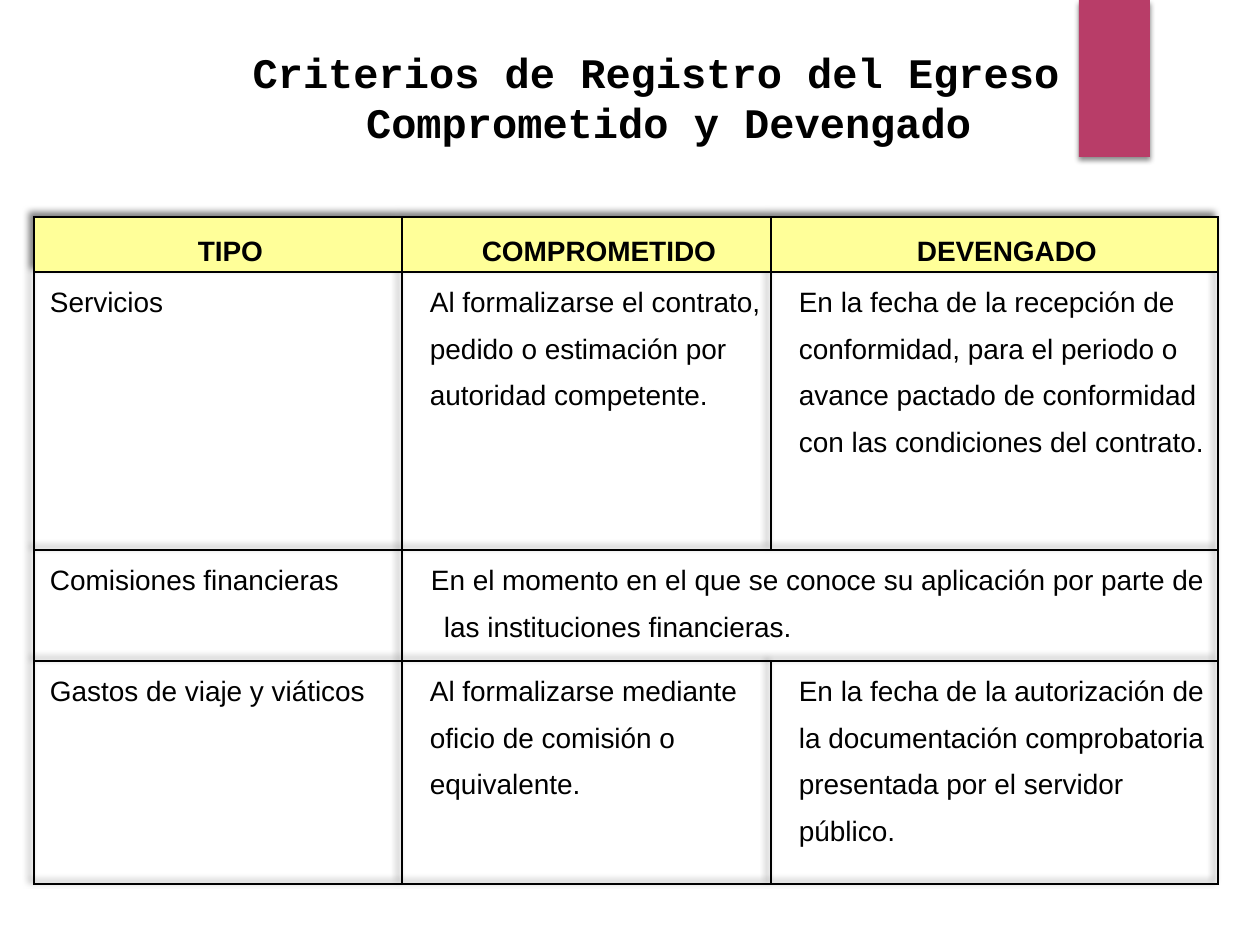
from lxml.etree import SubElement
from pptx import Presentation
from pptx.dml.color import RGBColor
from pptx.enum.shapes import MSO_SHAPE
from pptx.enum.text import MSO_ANCHOR, PP_ALIGN
from pptx.oxml import parse_xml
from pptx.oxml.ns import nsdecls, qn
from pptx.util import Emu, Pt

EMU_PER_PX = 914400 / 126
BLACK = RGBColor(0x00, 0x00, 0x00)
YELLOW = RGBColor(0xFF, 0xFF, 0x99)
MAGENTA = RGBColor(0xB8, 0x3D, 0x68)

TITLE = ["Criterios de Registro del Egreso ", "Comprometido y Devengado"]
HEADINGS = ["TIPO", "COMPROMETIDO", "DEVENGADO"]
CRITERIA = [
    ["Servicios",
     "Al formalizarse el contrato, pedido o estimación por autoridad competente.",
     "En la fecha de la recepción de conformidad, para el periodo o avance pactado "
     "de conformidad con las condiciones del contrato."],
    ["Comisiones financieras",
     "En el momento en el que se conoce su aplicación por parte de "
     "las instituciones financieras."],
    ["Gastos de viaje y viáticos",
     "Al formalizarse mediante oficio de comisión o equivalente.",
     "En la fecha de la autorización de la documentación comprobatoria "
     "presentada por el servidor público."],
]


def px(length):
    return Emu(round(length * EMU_PER_PX))


def write(frame, lines, font="Arial", size=16, bold=False, align=PP_ALIGN.LEFT,
          left=0, first=0, line_spacing=None, gap=None):
    """Fill a text frame; left and first are the paragraph indents in px."""
    for number, line in enumerate(lines):
        paragraph = frame.add_paragraph() if number else frame.paragraphs[0]
        paragraph.alignment = align
        properties = paragraph._p.get_or_add_pPr()
        properties.set("marL", str(px(left)))
        properties.set("indent", str(px(first)))
        if line_spacing:
            paragraph.line_spacing = line_spacing
        if gap:
            paragraph.space_before = paragraph.space_after = Pt(gap)
        run = paragraph.add_run()
        run.text = line
        run.font.name = font
        run.font.size = Pt(size)
        run.font.bold = bold
        run.font.color.rgb = BLACK


def shadow_effect(blur, distance, degrees, opacity):
    return parse_xml(
        f'<a:effectLst {nsdecls("a")}><a:outerShdw blurRad="{Pt(blur)}" '
        f'dist="{Pt(distance)}" dir="{degrees * 60000}" algn="ctr" rotWithShape="0">'
        f'<a:srgbClr val="{BLACK}"><a:alpha val="{opacity * 1000}"/></a:srgbClr>'
        '</a:outerShdw></a:effectLst>')


def outline_cell(cell):
    properties = cell._tc.get_or_add_tcPr()
    for position, side in enumerate(("lnL", "lnR", "lnT", "lnB")):
        border = SubElement(properties, qn(f"a:{side}"), w=str(Pt(1)))
        fill = SubElement(border, qn("a:solidFill"))
        SubElement(fill, qn("a:srgbClr"), val=str(BLACK))
        properties.insert(position, border)


class CriteriaSlide:
    def __init__(self, presentation):
        self.slide = presentation.slides.add_slide(presentation.slide_layouts[6])
        self.cell_style = {"line_spacing": 1.5, "gap": 1}

    def bar(self, left, top, width, height):
        bar = self.slide.shapes.add_shape(
            MSO_SHAPE.RECTANGLE, px(left), px(top), px(width), px(height))
        bar.fill.solid()
        bar.fill.fore_color.rgb = MAGENTA
        bar.line.fill.background()
        bar._element.spPr.append(shadow_effect(3, 2, 90, 45))

    def title(self, lines, left, top, width, height):
        box = self.slide.shapes.add_textbox(px(left), px(top), px(width), px(height))
        box.text_frame.word_wrap = True
        write(box.text_frame, lines, font="Courier New", size=24, bold=True,
              align=PP_ALIGN.CENTER)

    def cell(self, cell, text, fill=None, **text_format):
        cell.margin_left = cell.margin_right = px(4)
        cell.margin_top = cell.margin_bottom = 0
        if fill is None:
            cell.fill.background()
        else:
            cell.fill.solid()
            cell.fill.fore_color.rgb = fill
            cell.vertical_anchor = MSO_ANCHOR.MIDDLE
        outline_cell(cell)
        write(cell.text_frame, [text], **self.cell_style, **text_format)

    def table(self, headings, criteria, left, top, widths, heights):
        table = self.slide.shapes.add_table(
            len(heights), len(widths), px(left), px(top),
            px(sum(widths)), px(sum(heights))).table
        table.first_row = table.horz_banding = False
        table._tbl.tblPr.insert(0, shadow_effect(4, 3, 225, 50))
        for column, width in zip(table.columns, widths):
            column.width = px(width)
        for row, height in zip(table.rows, heights):
            row.height = px(height)

        for column, heading in enumerate(headings):
            self.cell(table.cell(0, column), heading, fill=YELLOW, bold=True,
                      align=PP_ALIGN.CENTER, first=25)
        for row, (kind, *moments) in enumerate(criteria, start=1):
            self.cell(table.cell(row, 0), kind, left=12)
            shared = len(moments) == 1
            indents = {"left": 38, "first": -13} if shared else {"left": 24}
            for column, moment in enumerate(moments, start=1):
                self.cell(table.cell(row, column), moment, **indents)
            if shared:
                last = table.cell(row, len(widths) - 1)
                last.fill.background()
                outline_cell(last)
                table.cell(row, 1).merge(last)


def main():
    presentation = Presentation()
    presentation.slide_width = px(1260)
    presentation.slide_height = px(945)
    slide = CriteriaSlide(presentation)
    slide.bar(1079, 0, 71, 157)
    slide.table(HEADINGS, CRITERIA, 34, 217, [368, 369, 447], [55, 278, 111, 223])
    slide.title(TITLE, 198, 40, 941, 115)
    presentation.save("out.pptx")


if __name__ == "__main__":
    main()
